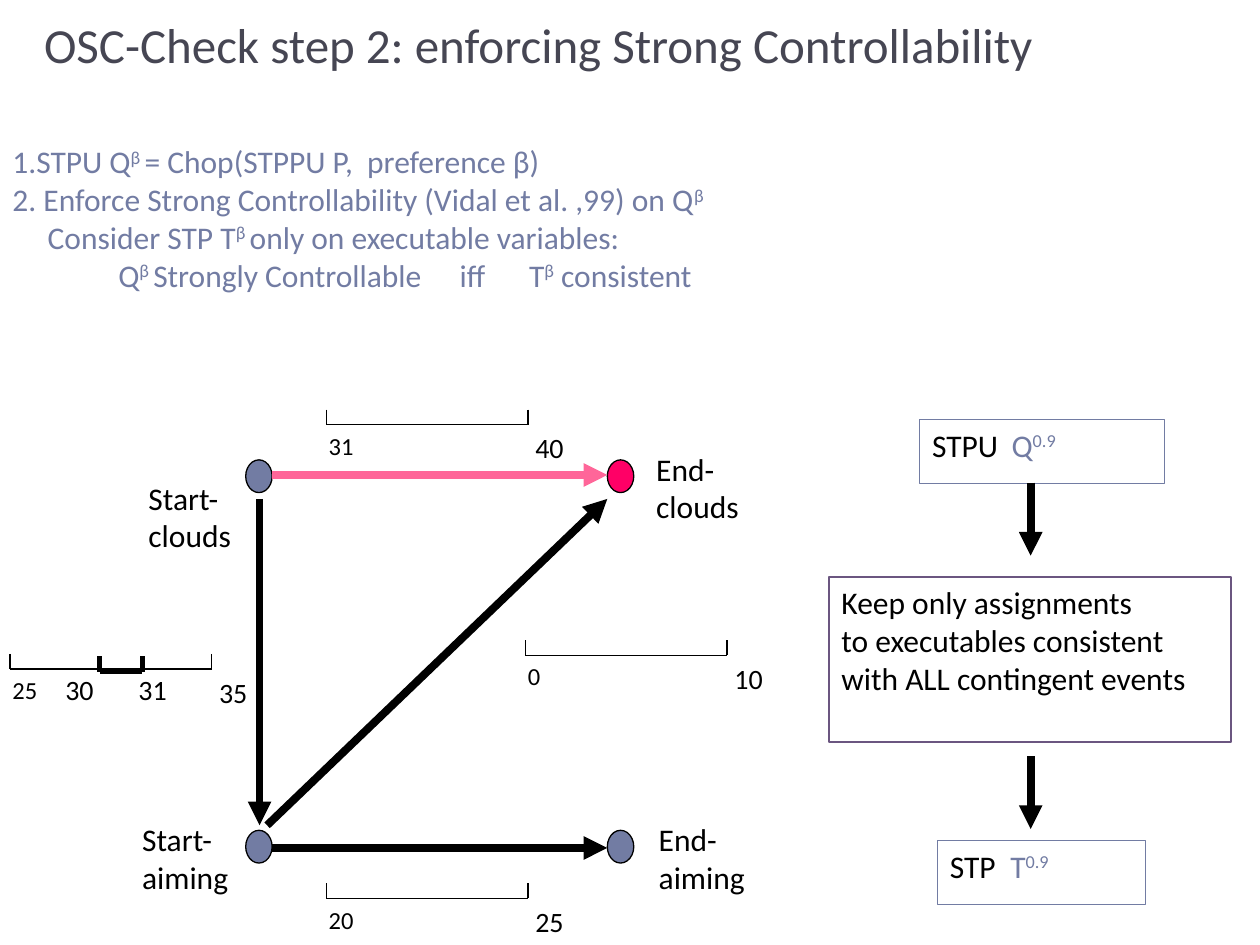
from dataclasses import dataclass
from lxml import etree
from pptx import Presentation
from pptx.dml.color import RGBColor
from pptx.enum.shapes import MSO_CONNECTOR as CONN, MSO_SHAPE as SHAPE
from pptx.enum.text import MSO_ANCHOR as ANCHOR, MSO_AUTO_SIZE as AUTO, PP_ALIGN as ALIGN
from pptx.oxml.ns import qn
from pptx.util import Inches, Pt


@dataclass(frozen=True)
class Theme:
    font: str = "Calibri"
    title: str = "464653"
    accent: str = "727CA3"
    purple: str = "6B5680"
    ink: str = "000000"
    pink: str = "FF6699"
    red: str = "FF0066"
    title_size: int = 28
    body_size: int = 18
    high_size: int = 16
    low_size: int = 14
    thin: float = 0.75
    medium: float = 3
    thick: float = 4.5


THEME = Theme()


def rgb(color):
    return RGBColor.from_string(color)


def style_run(r, size, color):
    r.font.name = THEME.font
    r.font.size = Pt(size)
    r.font.color.rgb = rgb(color)


def style_text(tf, size, color):
    for p in tf.paragraphs:
        p.alignment = ALIGN.LEFT
        for r in p.runs:
            style_run(r, size, color)


def add_run(p, text, color, raised=False):
    r = p.add_run()
    r.text = text
    style_run(r, THEME.body_size, color)
    if raised:
        r.font._element.set("baseline", "30000")


def set_tabs(p, stops):
    tabs = etree.SubElement(p._p.get_or_add_pPr(), qn("a:tabLst"))
    for stop in stops:
        etree.SubElement(tabs, qn("a:tab"), pos=str(Inches(stop)), algn="l")


def add_title(slide, text):
    sp = slide.shapes.title
    sp.left, sp.top, sp.width, sp.height = Inches(0.25), Inches(0), Inches(9), Inches(0.7)
    tf = sp.text_frame
    tf.text = text
    tf.vertical_anchor = ANCHOR.MIDDLE
    style_text(tf, THEME.title_size, THEME.title)


def add_label(slide, text, x, y, w, h, size):
    sp = slide.shapes.add_textbox(Inches(x), Inches(y), Inches(w), Inches(h))
    tf = sp.text_frame
    tf.text = text
    tf.word_wrap = False
    tf.auto_size = AUTO.SHAPE_TO_FIT_TEXT
    style_text(tf, size, THEME.ink)


def add_steps(slide):
    sp = slide.shapes.add_textbox(Inches(0), Inches(1.08), Inches(10.02), Inches(1.97))
    tf = sp.text_frame
    tf.word_wrap = True
    steps = [
        ((), ["1.STPU Q", "β ", "= Chop(STPPU P,  preference β)"]),
        ((), ["2. Enforce Strong Controllability (Vidal et al. ,99) on Q", "β"]),
        ((0.28,), ["\tConsider STP T", "β ", "only on executable variables:"]),
        ((0.84, 3.55, 4.1),
         ["\tQ", "β ", "Strongly Controllable\tiff\tT", "β", " consistent"]),
    ]
    for i, (stops, parts) in enumerate(steps):
        p = tf.paragraphs[0] if i == 0 else tf.add_paragraph()
        p.alignment = ALIGN.LEFT
        if stops:
            set_tabs(p, stops)
        for j, part in enumerate(parts):
            add_run(p, part, THEME.accent, raised=j % 2 == 1)


def add_line(slide, x1, y1, x2, y2, color=THEME.ink, weight=THEME.thin, arrow=False):
    line = slide.shapes.add_connector(
        CONN.STRAIGHT, Inches(x1), Inches(y1), Inches(x2), Inches(y2))
    line.line.color.rgb = rgb(color)
    line.line.width = Pt(weight)
    if arrow:
        etree.SubElement(line.line._get_or_add_ln(), qn("a:tailEnd"), type="triangle")
    etree.SubElement(line._element.spPr, qn("a:effectLst"))


def add_arrow(slide, x1, y1, x2, y2, color=THEME.ink):
    add_line(slide, x1, y1, x2, y2, color, THEME.thick, arrow=True)


def add_bracket(slide, x, y, w, weight=THEME.thin):
    right, base = x + w, y + 0.12
    add_line(slide, x, y, x, base, weight=weight)
    add_line(slide, x, base, right, base, weight=weight)
    add_line(slide, right, y, right, base, weight=weight)


def add_interval(slide, low, high, x, y, w=1.6):
    add_bracket(slide, x, y, w)
    low_width = 0.2 + 0.11 * len(low)
    add_label(slide, low, x - 0.08, y + 0.12, low_width, 0.33, THEME.low_size)
    add_label(slide, high, x + w - 0.04, y + 0.12, 0.45, 0.37, THEME.high_size)


def add_event(slide, x, y, color, text, text_x, text_y):
    sp = slide.shapes.add_shape(
        SHAPE.OVAL, Inches(x), Inches(y), Inches(0.21), Inches(0.26))
    sp.shadow.inherit = False
    sp.fill.solid()
    sp.fill.fore_color.rgb = rgb(color)
    sp.line.color.rgb = rgb(THEME.ink)
    sp.line.width = Pt(THEME.thin)
    add_label(slide, text, text_x, text_y, 0.93, 0.7, THEME.body_size)


def add_box(slide, x, y, w, h, color):
    sp = slide.shapes.add_shape(
        SHAPE.RECTANGLE, Inches(x), Inches(y), Inches(w), Inches(h))
    sp.shadow.inherit = False
    sp.fill.background()
    sp.line.color.rgb = rgb(color)
    sp.line.width = Pt(THEME.thin)
    tf = sp.text_frame
    tf.word_wrap = True
    tf.vertical_anchor = ANCHOR.TOP
    return tf


def add_network_box(slide, x, y, w, name, symbol, stop):
    p = add_box(slide, x, y, w, 0.51, THEME.accent).paragraphs[0]
    p.alignment = ALIGN.LEFT
    set_tabs(p, [stop])
    add_run(p, name + "\t", THEME.ink)
    add_run(p, symbol, THEME.accent)
    add_run(p, "0.9", THEME.accent, raised=True)


def add_flow(slide):
    add_network_box(slide, 7.3, 3.33, 1.94, "STPU", "Q", 0.63)
    tf = add_box(slide, 6.58, 4.58, 3.19, 1.31, THEME.purple)
    tf.text = "Keep only assignments\nto executables consistent\nwith ALL contingent events"
    style_text(tf, THEME.body_size, THEME.ink)
    add_network_box(slide, 7.44, 6.67, 1.65, "STP", "T", 0.48)
    for top in (3.83, 6):
        add_arrow(slide, 8.18, top, 8.18, top + 0.58)


def add_graph(slide):
    add_event(slide, 1.95, 3.65, THEME.accent, "Start-\nclouds", 1.08, 3.75)
    add_event(slide, 1.95, 6.59, THEME.accent, "Start-\naiming", 1.03, 6.46)
    add_event(slide, 4.82, 6.59, THEME.accent, "End-\naiming", 5.13, 6.46)
    add_event(slide, 4.82, 3.65, THEME.red, "End-\nclouds", 5.11, 3.52)
    add_arrow(slide, 2.16, 6.73, 4.82, 6.73)
    add_arrow(slide, 2.06, 3.96, 2.06, 6.55)
    add_arrow(slide, 2.16, 3.77, 4.82, 3.77, THEME.pink)
    add_arrow(slide, 2.12, 6.55, 4.82, 3.96)
    add_interval(slide, "20", "25", 2.59, 7.01)
    add_interval(slide, "25", "35", 0.08, 5.19)
    add_interval(slide, "31", "40", 2.59, 3.25)
    add_interval(slide, "0", "10", 4.17, 5.08)
    add_bracket(slide, 0.79, 5.21, 0.34, THEME.medium)
    for text, x in (("30", 0.42), ("31", 1)):
        add_label(slide, text, x, 5.29, 0.45, 0.37, THEME.high_size)


def main():
    prs = Presentation()
    prs.slide_width, prs.slide_height = Inches(10), Inches(7.5)
    slide = prs.slides.add_slide(prs.slide_layouts[5])
    add_title(slide, "OSC-Check step 2: enforcing Strong Controllability")
    add_steps(slide)
    add_graph(slide)
    add_flow(slide)
    prs.save("out.pptx")


if __name__ == "__main__":
    main()
